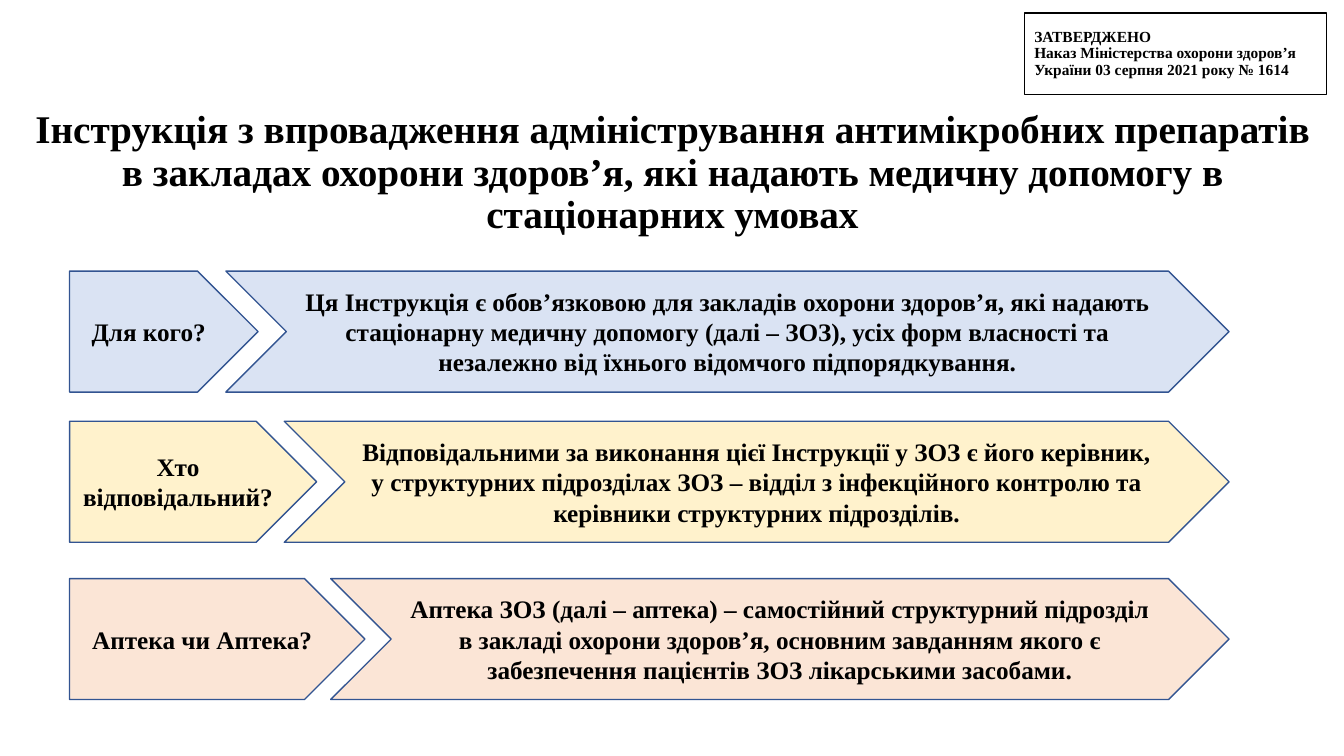
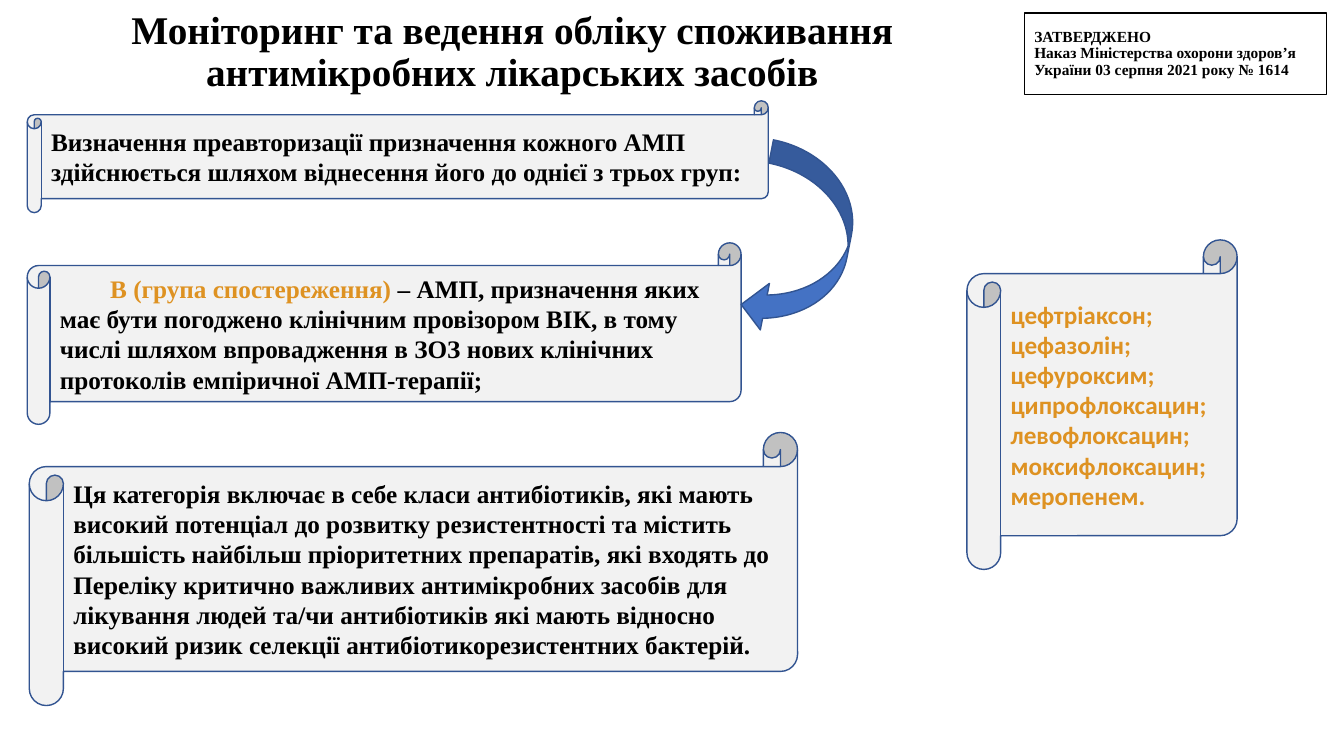
from pptx import Presentation
from pptx import util as u
from pptx.dml.color import RGBColor
from pptx.enum import shapes, text

PX = 9144
BLACK = RGBColor(0x00, 0x00, 0x00)
BORDER = RGBColor(0x32, 0x54, 0x91)
ARROW = RGBColor(0x44, 0x72, 0xC4)
PALE_BLUE = RGBColor(0xDA, 0xE3, 0xF3)
PALE_YELLOW = RGBColor(0xFF, 0xF2, 0xCC)
PALE_ORANGE = RGBColor(0xFB, 0xE5, 0xD6)
PALE_GREY = RGBColor(0xF2, 0xF2, 0xF2)
GOLD = RGBColor(0xDE, 0x92, 0x22)
SERIF = "Times New Roman"
KIND = shapes.MSO_SHAPE
LEFT, CENTER = text.PP_ALIGN.LEFT, text.PP_ALIGN.CENTER
MIDDLE, TOP = text.MSO_ANCHOR.MIDDLE, text.MSO_ANCHOR.TOP


def write(shape, words, size=18, align=LEFT, color=BLACK, font=SERIF, spacing=1.0, anchor=MIDDLE):
    frame = shape.text_frame
    frame.word_wrap = True
    frame.vertical_anchor = anchor
    frame.text = words
    for paragraph in frame.paragraphs:
        paragraph.alignment = align
        paragraph.line_spacing = spacing
        paragraph.font.name = font
        paragraph.font.size = u.Pt(size)
        paragraph.font.bold = True
        paragraph.font.color.rgb = color


def draw(slide, kind, box, fill=None, line=BORDER):
    shape = slide.shapes.add_shape(kind, *[length * PX for length in box])
    shape.shadow.inherit = False
    if fill is None:
        shape.fill.background()
    else:
        shape.fill.solid()
        shape.fill.fore_color.rgb = fill
    shape.line.color.rgb = line
    shape.line.width = u.Pt(1)
    return shape


presentation = Presentation()
presentation.slide_width = 1333 * PX
presentation.slide_height = 750 * PX

STAMP = "ЗАТВЕРДЖЕНО\nНаказ Міністерства охорони здоров’я України 03 серпня 2021 року № 1614"
TITLES = [
    ("Інструкція з впровадження адміністрування антимікробних препаратів в закладах "
     "охорони здоров’я, які надають медичну допомогу в стаціонарних умовах",
     (14, 104, 1306, 120), TOP),
    ("Моніторинг та ведення обліку споживання антимікробних лікарських засобів",
     (27, 25, 962, 55), MIDDLE),
]
slides = []
for title, box, anchor in TITLES:
    slide = presentation.slides.add_slide(presentation.slide_layouts[6])
    stamp = draw(slide, KIND.RECTANGLE, (1016, 13, 300, 81), line=BLACK)
    write(stamp, STAMP, size=11, spacing=0.9)
    heading = slide.shapes.add_textbox(*[length * PX for length in box])
    write(heading, title, size=28, align=CENTER, spacing=0.9, anchor=anchor)
    slides.append(slide)
instruction, monitoring = slides

ROW_LEFT, ROW_RIGHT, ROW_HEIGHT = 69, 1219, 120
ROWS = [
    (269, 187, 224, PALE_BLUE, "Для кого?",
     "Ця Інструкція є обов’язковою для закладів охорони здоров’я, які надають стаціонарну "
     "медичну допомогу (далі – ЗОЗ), усіх форм власності та незалежно від їхнього "
     "відомчого підпорядкування."),
    (418, 245, 282, PALE_YELLOW, "Хто відповідальний?",
     "Відповідальними за виконання цієї Інструкції у ЗОЗ є його керівник, у структурних "
     "підрозділах ЗОЗ – відділ з інфекційного контролю та керівники структурних підрозділів."),
    (574, 293, 328, PALE_ORANGE, "Аптека чи Аптека?",
     "Аптека ЗОЗ (далі – аптека) – самостійний структурний підрозділ в закладі охорони "
     "здоров’я, основним завданням якого є забезпечення пацієнтів ЗОЗ лікарськими засобами."),
]
for top, width, answer_left, fill, question, answer in ROWS:
    label = draw(instruction, KIND.PENTAGON, (ROW_LEFT, top, width, ROW_HEIGHT), fill)
    write(label, question, align=CENTER)
    chevron = draw(instruction, KIND.CHEVRON,
                   (answer_left, top, ROW_RIGHT - answer_left, ROW_HEIGHT), fill)
    write(chevron, answer, align=CENTER)

SCROLLS = [
    ((27, 100, 735, 111), BLACK, SERIF,
     "Визначення преавторизації призначення кожного АМП здійснюється шляхом віднесення "
     "його до однієї з трьох груп:"),
    ((959, 238, 268, 327), GOLD, "Calibri",
     "цефтріаксон;\nцефазолін;\nцефуроксим;\nципрофлоксацин;\nлевофлоксацин;\n"
     "моксифлоксацин;\nмеропенем."),
    ((29, 429, 762, 271), BLACK, SERIF,
     "Ця категорія включає в себе класи антибіотиків, які мають високий потенціал до "
     "розвитку резистентності та містить більшість найбільш пріоритетних препаратів, які "
     "входять до Переліку критично важливих антимікробних засобів для лікування людей та/чи "
     "антибіотиків які мають відносно високий ризик селекції антибіотикорезистентних бактерій."),
    ((27, 241, 708, 180), BLACK, SERIF, "B (група спостереження) "),
]
for box, color, font, words in SCROLLS:
    scroll = draw(monitoring, KIND.HORIZONTAL_SCROLL, box, PALE_GREY)
    write(scroll, words, color=color, font=font)

group = scroll.text_frame.paragraphs[0]
group.runs[0].font.color.rgb = GOLD
group.add_run().text = (
    "– АМП, призначення яких має бути погоджено клінічним провізором ВІК, в тому числі "
    "шляхом впровадження в ЗОЗ нових клінічних протоколів емпіричної АМП-терапії;")
group_properties = group._p.get_or_add_pPr()
group_properties.set("marL", "0")
group_properties.set("indent", str(50 * PX))

arrow = draw(monitoring, KIND.CURVED_UP_ARROW, (700, 194, 190, 94), ARROW)
arrow.rotation = 101.1
arrow._element.spPr.xfrm.set("flipV", "1")

presentation.save("out.pptx")
